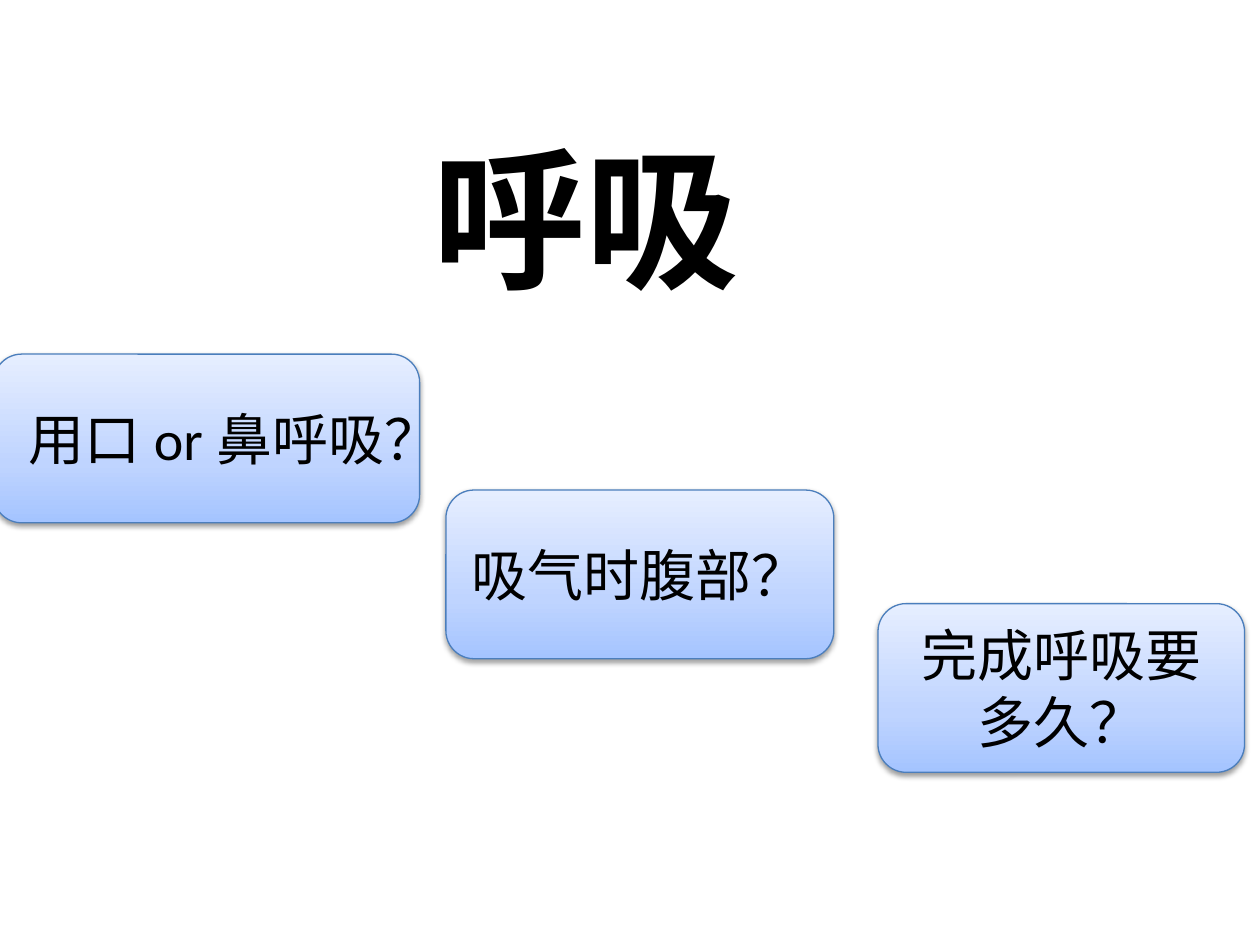
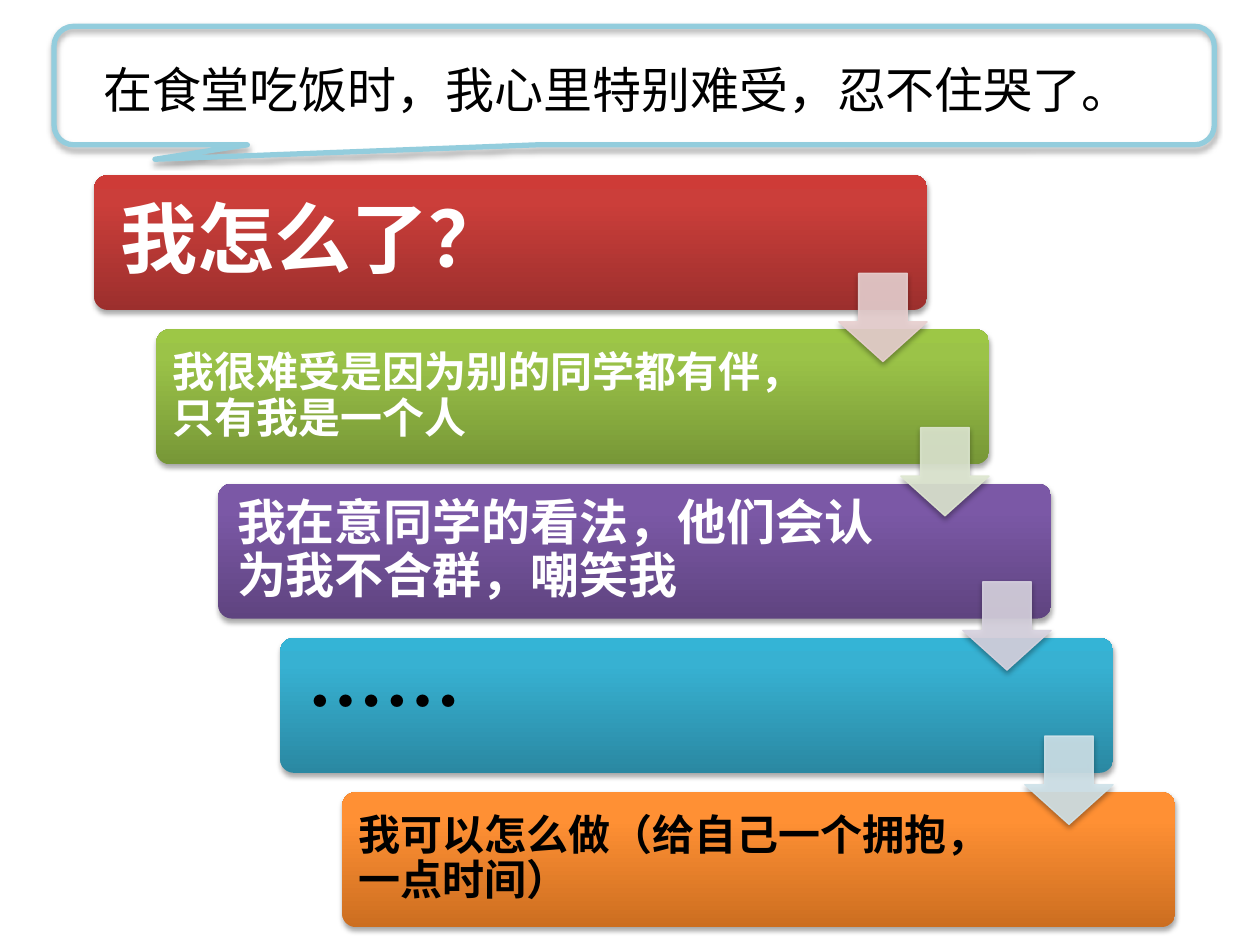
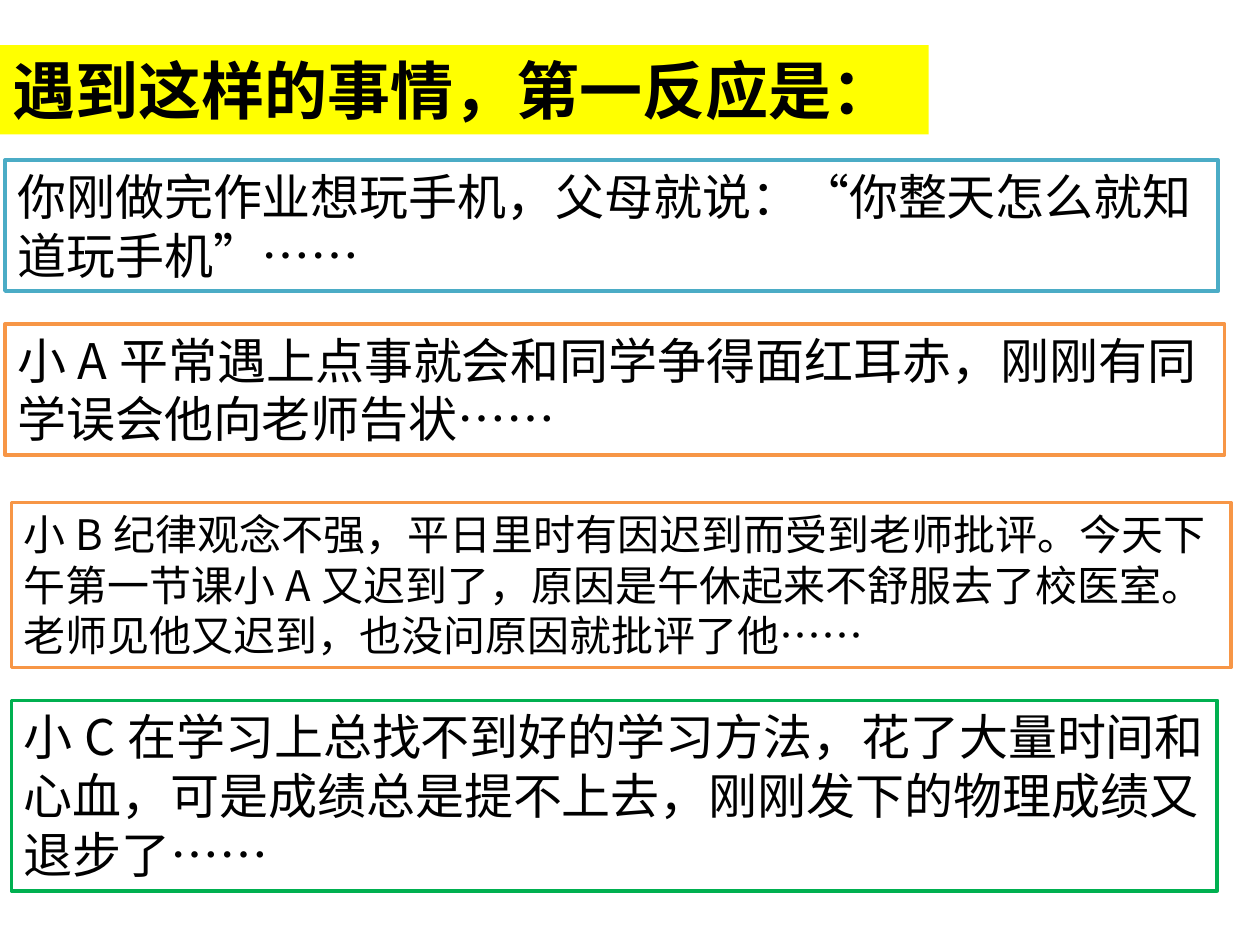
"""Build three class slides on breathing, feelings and first reactions."""
from lxml import etree
from pptx import Presentation
from pptx.dml.color import RGBColor
from pptx.enum.shapes import MSO_SHAPE
from pptx.enum.text import MSO_ANCHOR, MSO_AUTO_SIZE, PP_ALIGN
from pptx.oxml.ns import qn
from pptx.util import Cm, Pt

ROUND, CALLOUT, ARROW = (MSO_SHAPE.ROUNDED_RECTANGLE,
                         MSO_SHAPE.ROUNDED_RECTANGULAR_CALLOUT, MSO_SHAPE.DOWN_ARROW)
TOP, MIDDLE = MSO_ANCHOR.TOP, MSO_ANCHOR.MIDDLE
LEFT, CENTER = PP_ALIGN.LEFT, PP_ALIGN.CENTER
GROW = MSO_AUTO_SIZE.SHAPE_TO_FIT_TEXT


class Theme:
    """Colours, fonts and type sizes."""
    black, white, yellow = "000000", "FFFFFF", "FFFF00"
    teal, orange, green, sky = "4BACC6", "F79646", "00B050", "93CDDD"
    question_line = "4B7EBC"
    question_fill = [(0, "A4C4FF"), (35, "BFD4FF"), (100, "E6EEFF")]
    step_fills = [
        [(0, "9C2F2D"), (80, "CB3E3A"), (100, "CE3B37")],
        [(0, "779737"), (80, "9BC348"), (100, "9DC746")],
        [(0, "5F4480"), (80, "7B58A6"), (100, "7C57A8")],
        [(0, "2A88A2"), (80, "37B1D2"), (100, "34B4D6")],
        [(0, "CC6E20"), (80, "FF9034"), (100, "FF9136")],
    ]
    arrow_fills = ["E8D0D0", "DEE7D1", "D8D3E0", "D0E3EA"]
    title_font, body_font, cjk_font = "Arial", "Calibri", "Noto Sans CJK SC"
    huge, large, heading, question, body, small = 88, 44, 36, 32, 28, 24


def add_xml(parent, tag, **attrs):
    """Append a DrawingML child element."""
    return etree.SubElement(parent, qn(f"a:{tag}"), {k: str(v) for k, v in attrs.items()})


class Deck:
    """Holds the theme and the current slide."""

    def __init__(self, theme):
        self.theme = theme
        self.prs = Presentation()
        self.prs.slide_width, self.prs.slide_height = Cm(25.4), Cm(19.05)
        self.s = None

    def slide(self):
        """Start a blank slide."""
        self.s = self.prs.slides.add_slide(self.prs.slide_layouts[6])

    def paint(self, sp, fill=None, line=None, width=0.75):
        """Set a solid, gradient or empty fill and the outline."""
        if isinstance(fill, list):
            sp.fill.gradient()
            sp.fill.gradient_angle = 90
            stops = sp._element.spPr.find(f".//{qn('a:gsLst')}")
            for stop in list(stops):
                stops.remove(stop)
            for pos, color in fill:
                add_xml(add_xml(stops, "gs", pos=pos * 1000), "srgbClr", val=color)
        elif fill:
            sp.fill.solid()
            sp.fill.fore_color.rgb = RGBColor.from_string(fill)
        else:
            sp.fill.background()
        if line:
            sp.line.color.rgb = RGBColor.from_string(line)
            sp.line.width = Pt(width)
        else:
            sp.line.fill.background()

    def shape(self, kind, box, fill=None, line=None, width=0.75, adj=(), alpha=None,
              shade=35, drop=1.8):
        """Add a preset shape with a soft shadow below it."""
        sp = self.s.shapes.add_shape(kind, *map(Cm, box))
        for i, value in enumerate(adj):
            sp.adjustments[i] = value
        self.paint(sp, fill, line, width)
        if alpha:
            for color in sp._element.spPr.iter(qn("a:srgbClr")):
                add_xml(color, "alpha", val=alpha * 1000)
        sp.shadow.inherit = False
        effects = sp._element.spPr.find(qn("a:effectLst"))
        shadow = add_xml(effects, "outerShdw", blurRad=Pt(3.1), dist=Pt(drop),
                         dir=5400000, rotWithShape=0)
        color = add_xml(shadow, "srgbClr", val=self.theme.black)
        add_xml(color, "alpha", val=shade * 1000)
        return sp

    def set_text(self, sp, text, size, font, color=Theme.black, bold=False, align=LEFT,
                 anchor=TOP, spacing=None, wrap=True):
        """Fill a shape with text in one style."""
        tf = sp.text_frame
        tf.word_wrap, tf.vertical_anchor = wrap, anchor
        tf.text = text
        for p in tf.paragraphs:
            p.alignment = align
            if spacing:
                p.line_spacing = spacing
            p.font.size, p.font.bold, p.font.name = Pt(size), bold, font
            p.font.color.rgb = RGBColor.from_string(color)
            add_xml(p._p.pPr.find(qn("a:defRPr")), "ea", typeface=self.theme.cjk_font)

    def text(self, box, text, size, font=Theme.cjk_font, fill=None, line=None, inset=None,
             grow=True, **style):
        """Add a text box, with a fill and frame if given."""
        sp = self.s.shapes.add_textbox(*map(Cm, box))
        self.paint(sp, fill, line, 2)
        self.set_text(sp, text, size, font, **style)
        tf = sp.text_frame
        if grow:
            tf.auto_size = GROW
        if inset:
            tf.margin_left = tf.margin_right = tf.margin_top = tf.margin_bottom = Cm(inset)

    def question(self, left, top, width, text):
        """Add a pale blue question card."""
        t = self.theme
        sp = self.shape(ROUND, (left, top, width, 3.4), t.question_fill, t.question_line,
                        shade=38, drop=1.6)
        self.set_text(sp, text, t.question, t.body_font, align=CENTER, anchor=MIDDLE)

    def staircase(self, steps):
        """Add descending step cards joined by arrows."""
        t = self.theme
        width, height, arrow = 16.79, 2.72, 1.78
        corners = [(1.9 + 1.25 * i, 3.53 + 3.11 * i) for i in range(len(steps))]
        for (x, y), fill, (text, size, color, inset) in zip(corners, t.step_fills, steps):
            self.shape(ROUND, (x, y, width, height), fill, adj=[0.1])
            self.text((x + 0.08, y + 0.08, 13.59, 2.56), text, size, inset=inset, grow=False,
                      color=color, bold=True, anchor=MIDDLE, spacing=0.9)
        for (x, y), fill in zip(corners, t.arrow_fills):
            self.shape(ARROW, (x + width - arrow, y + 1.98, arrow, arrow), fill, fill,
                       adj=[0.55, 0.45], alpha=90)


def main():
    """Build and save the slides."""
    t = Theme()
    deck = Deck(t)

    deck.slide()
    deck.text((8.46, 1.24, 6.78, 4.67), "呼吸", t.huge, t.title_font, bold=True,
              spacing=1.3, wrap=False)
    deck.question(8.99, 9.88, 7.82, "吸气时腹部？")
    deck.question(17.7, 12.17, 7.39, "完成呼吸要多久？")
    deck.question(-0.13, 7.14, 8.59, "用口or鼻呼吸？")

    deck.slide()
    deck.shape(CALLOUT, (1.09, 0.53, 23.39, 2.39), line=t.sky, width=3,
               adj=[-0.413, 0.622, 0.167])
    deck.text((1.83, 1.07, 22.17, 1.45), "在食堂吃饭时，我心里特别难受，忍不住哭了。",
              t.body, t.body_font)
    deck.staircase([
        ("我怎么了？", t.large, t.white, 0.46),
        ("我很难受是因为别的同学都有伴，只有我是一个人", t.small, t.white, 0.25),
        ("我在意同学的看法，他们会认为我不合群，嘲笑我", t.body, t.white, 0.3),
        ("……", t.large, t.black, 0.46),
        ("我可以怎么做（给自己一个拥抱，一点时间）", t.small, t.black, 0.25),
    ])

    deck.slide()
    deck.text((0, 0.91, 18.72, 1.8), "遇到这样的事情，第一反应是：", t.heading,
              fill=t.yellow, bold=True)
    deck.text((0.1, 3.23, 24.46, 2.64),
              "你刚做完作业想玩手机，父母就说：“你整天怎么就知\n道玩手机”……",
              t.body, fill=t.white, line=t.teal, wrap=False)
    for box, text, size, line in [
        ((0.1, 6.53, 24.59, 2.64),
         "小A平常遇上点事就会和同学争得面红耳赤，刚刚有同学误会他向老师告状……",
         t.body, t.orange),
        ((0.23, 10.13, 24.59, 3.33),
         "小B纪律观念不强，平日里时有因迟到而受到老师批评。今天下午第一节课小A又迟到了，"
         "原因是午休起来不舒服去了校医室。老师见他又迟到，也没问原因就批评了他……",
         t.small, t.orange),
        ((0.23, 14.12, 24.31, 3.84),
         "小C在学习上总找不到好的学习方法，花了大量时间和心血，可是成绩总是提不上去，"
         "刚刚发下的物理成绩又退步了……",
         t.body, t.green),
    ]:
        deck.text(box, text, size, fill=t.white, line=line)

    deck.prs.save("out.pptx")


if __name__ == "__main__":
    main()
